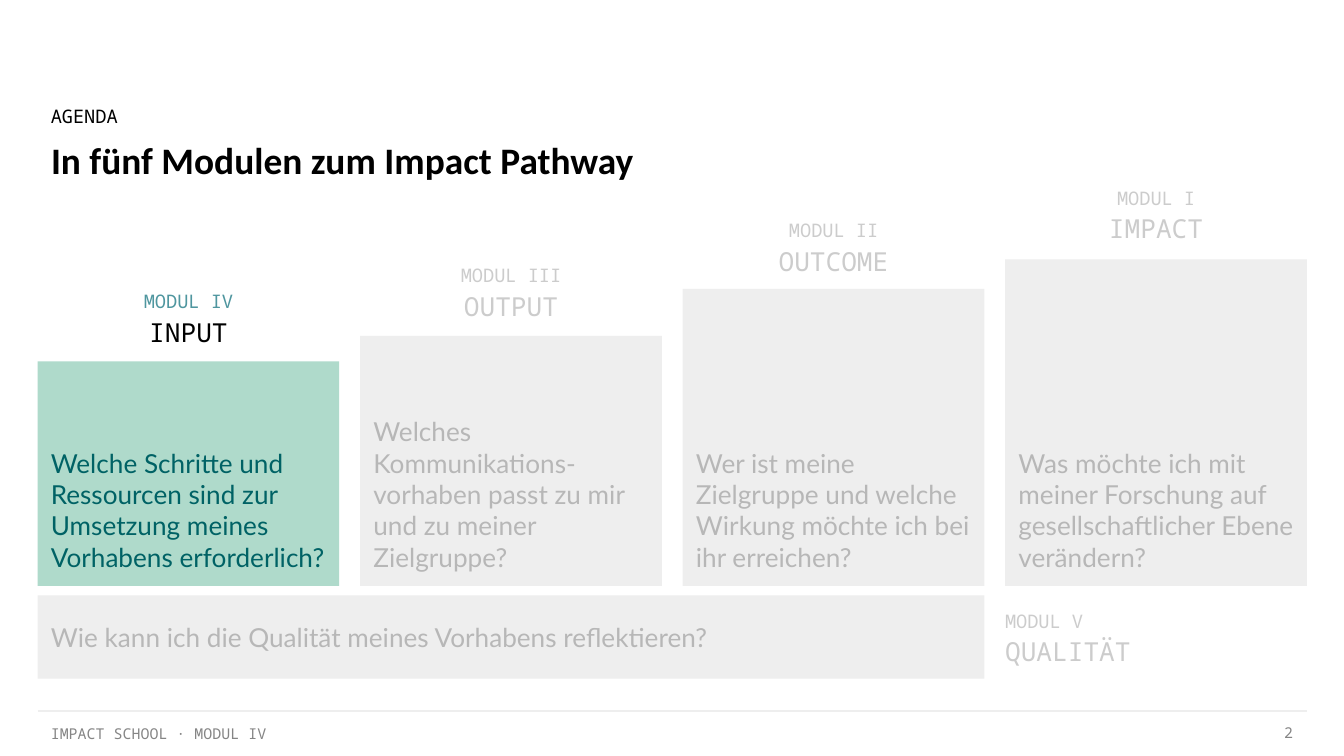
from copy import deepcopy
from dataclasses import dataclass

from lxml import etree
from pptx import Presentation
from pptx.dml.color import RGBColor
from pptx.enum.shapes import MSO_CONNECTOR, MSO_SHAPE
from pptx.enum.text import MSO_ANCHOR, MSO_AUTO_SIZE, PP_ALIGN
from pptx.oxml.ns import qn
from pptx.util import Inches, Pt

RECT = MSO_SHAPE.RECTANGLE
STRAIGHT = MSO_CONNECTOR.STRAIGHT
TOP, MIDDLE, BOTTOM = MSO_ANCHOR.TOP, MSO_ANCHOR.MIDDLE, MSO_ANCHOR.BOTTOM
LEFT, CENTER, RIGHT = PP_ALIGN.LEFT, PP_ALIGN.CENTER, PP_ALIGN.RIGHT
TITLE_ONLY = 5


@dataclass(frozen=True)
class Theme:
    title: str = "Calibri"
    body: str = "Lato"
    mono: str = "Noto Sans Mono"
    black: str = "000000"
    white: str = "FFFFFF"
    panel: str = "EEEEEE"
    muted: str = "B7B7B7"
    label: str = "CCCCCC"
    footer: str = "858585"
    active_panel: str = "AFDACB"
    active_text: str = "006265"
    active_label: str = "4F969F"
    title_size: int = 20
    text_size: int = 14
    label_size: int = 10
    footer_size: int = 8


T = Theme()

# Grid in inches; the slide is 16:9
SLIDE_W = 10
SLIDE_H = SLIDE_W * 9 / 16
MARGIN, PITCH, COLS = 0.28, 2.4, 4
COL_W = 4.49 / 2
RIGHT_EDGE = MARGIN + (COLS - 1) * PITCH + COL_W
STEP_BOTTOM, FOOTER_Y = 4.36, 5.29
LABEL_H, LABEL_RISE = 0.28, 0.23

# module, name, question, top of step, top of name, label width, active
STEPS = [
    ("MODUL IV", "INPUT", "Welche Schritte und Ressourcen sind zur Umsetzung "
     "meines Vorhabens erforderlich?", 2.69, 2.33, 1.65, True),
    ("MODUL III", "OUTPUT", "Welches Kommunikations-\nvorhaben passt zu mir "
     "und zu meiner Zielgruppe?", 2.5, 2.14, 1.65, False),
    ("MODUL II", "OUTCOME", "Wer ist meine Zielgruppe und welche Wirkung "
     "möchte ich bei ihr erreichen?", 2.15, 1.8, 1.44, False),
    ("MODUL I", "IMPACT", "Was möchte ich mit meiner Forschung auf "
     "gesellschaftlicher Ebene verändern?", 1.93, 1.56, 1.77, False),
]


def column_x(col):
    return MARGIN + col * PITCH


def write(s, text, size, color, font=T.mono, bold=False, align=LEFT,
          anchor=MIDDLE, spacing=None):
    tf = s.text_frame
    frame = dict(word_wrap=True, auto_size=MSO_AUTO_SIZE.NONE,
                 vertical_anchor=anchor)
    for side in ("left", "top", "right", "bottom"):
        frame["margin_" + side] = Inches(0.1)
    for name, value in frame.items():
        setattr(tf, name, value)
    p = tf.paragraphs[0]
    p.text = text
    p.alignment = align
    if spacing:
        p.line_spacing = spacing
    for r in p.runs:
        for name, value in dict(name=font, size=Pt(size), bold=bold).items():
            setattr(r.font, name, value)
        r.font.color.rgb = RGBColor.from_string(color)
    # A line break needs the run's format to keep the line height
    for br in p._p.findall(qn("a:br")):
        br.append(deepcopy(p.runs[0]._r.rPr))


def add_text(slide, box, text, size, color, **fmt):
    s = slide.shapes.add_textbox(*map(Inches, box))
    write(s, text, size, color, **fmt)


def add_panel(slide, box, fill, text, color, **fmt):
    s = slide.shapes.add_shape(RECT, *map(Inches, box))
    s.shadow.inherit = False
    s.fill.solid()
    s.fill.fore_color.rgb = RGBColor.from_string(fill)
    s.line.fill.background()
    write(s, text, T.text_size, color, **fmt)


def add_heading(slide):
    s = slide.shapes.title
    place = dict(left=MARGIN, top=0.92, width=7.77, height=0.52)
    for name, value in place.items():
        setattr(s, name, Inches(value))
    write(s, "In fünf Modulen zum Impact Pathway", T.title_size, T.black,
          font=T.title, bold=True, anchor=TOP)
    add_text(slide, (MARGIN, 0.76, 7.77, 0.2), "AGENDA", T.label_size, T.black)


def add_step(slide, col, module, name, question, top, name_top, label_w,
             active):
    x = column_x(col)
    fill, color = ((T.active_panel, T.active_text) if active
                   else (T.panel, T.muted))
    add_panel(slide, (x, top, COL_W, STEP_BOTTOM - top), fill, question,
              color, font=T.body, anchor=BOTTOM)
    label_x = x + (COL_W - label_w) / 2
    for text, y, size, active_color in (
            (name, name_top, T.text_size, T.black),
            (module, name_top - LABEL_RISE, T.label_size, T.active_label)):
        add_text(slide, (label_x, y, label_w, LABEL_H), text, size,
                 active_color if active else T.label, align=CENTER)


def add_quality_bar(slide):
    x = column_x(3) - 0.1
    add_panel(slide, (x, 4.63, 1.22, 0.37), T.white, "QUALITÄT", T.label,
              anchor=TOP)
    add_panel(slide, (MARGIN, 4.43, 2 * PITCH + COL_W, 0.62), T.panel,
              "Wie kann ich die Qualität meines Vorhabens reflektieren?",
              T.muted, font=T.body)
    add_text(slide, (x, 4.48, 1, LABEL_H), "MODUL V", T.label_size, T.label)


def add_footer(slide):
    add_text(slide, (MARGIN, FOOTER_Y, 6.3, 0.34), "IMPACT SCHOOL · MODUL IV",
             T.footer_size, T.footer, anchor=TOP)
    add_text(slide, (9.29, FOOTER_Y, 0.43, 0.34), "2", T.footer_size,
             T.footer, align=RIGHT, spacing=0.8)
    ends = (MARGIN, FOOTER_Y, RIGHT_EDGE, FOOTER_Y)
    line = slide.shapes.add_connector(STRAIGHT, *map(Inches, ends))
    line.line.color.rgb = RGBColor.from_string(T.panel)
    line.line.width = Pt(0.75)
    etree.SubElement(line._element.spPr, qn("a:effectLst"))


def main():
    prs = Presentation()
    prs.slide_width, prs.slide_height = Inches(SLIDE_W), Inches(SLIDE_H)
    slide = prs.slides.add_slide(prs.slide_layouts[TITLE_ONLY])
    add_footer(slide)
    for col, step in enumerate(STEPS):
        add_step(slide, col, *step)
    add_quality_bar(slide)
    add_heading(slide)
    prs.save("out.pptx")


if __name__ == "__main__":
    main()
